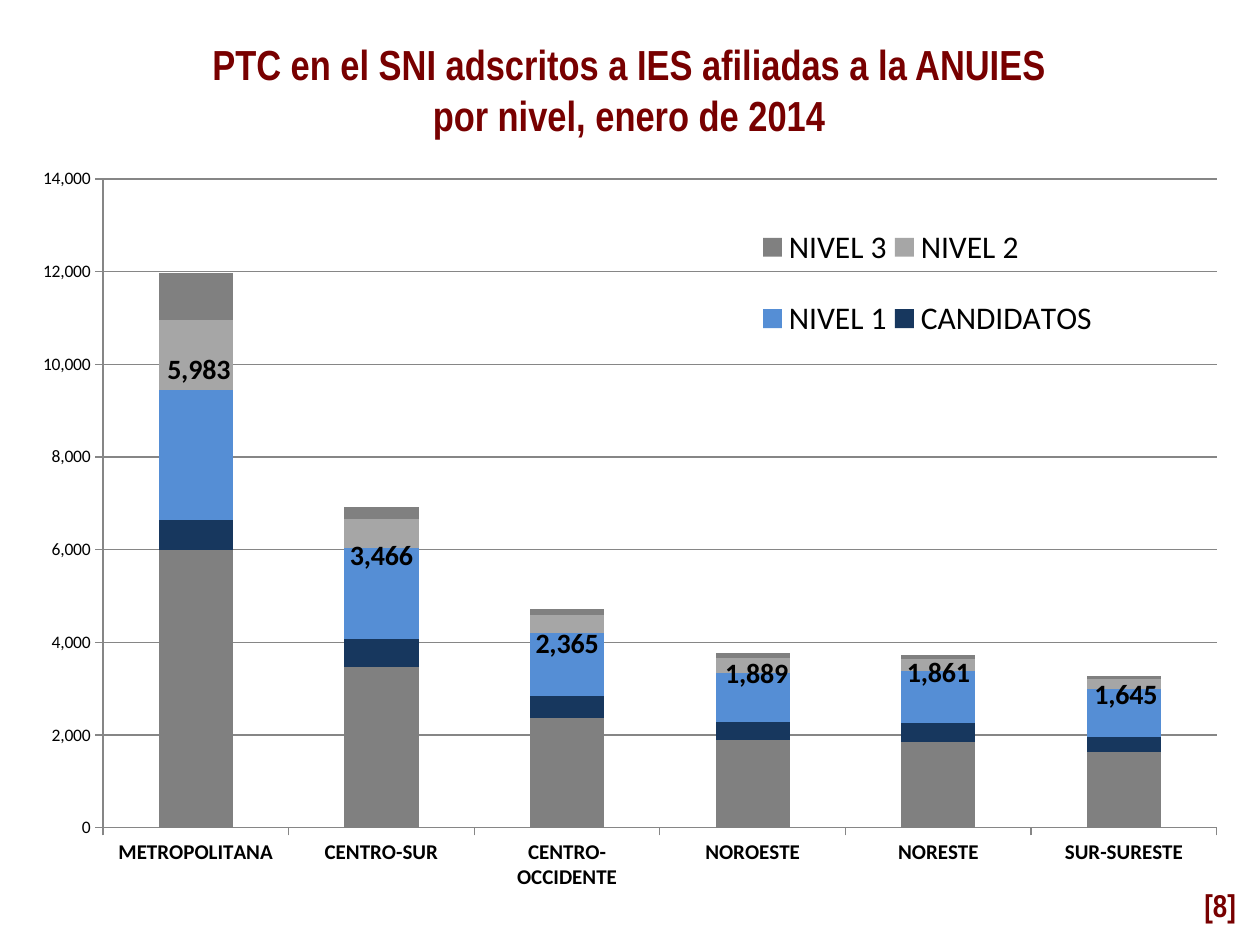
from copy import deepcopy
from dataclasses import dataclass

from pptx import Presentation
from pptx.chart.data import CategoryChartData
from pptx.dml.color import RGBColor
from pptx.enum import chart as charts, text
from pptx.oxml import parse_xml
from pptx.oxml.ns import nsdecls, qn
from pptx.util import Pt

PX = 914400 / 126  # EMU per px


@dataclass(frozen=True)
class Theme:
    heading_font: str = "Arial Narrow"
    chart_font: str = "Calibri"
    heading: str = "780000"
    ink: str = "000000"
    rule: str = "868686"
    title_size: int = 24
    page_size: int = 18
    legend_size: int = 18
    total_size: int = 16
    category_size: int = 12
    axis_size: int = 10


THEME = Theme()

# Chart geometry in px: left, top, width, height
CHART = (19, 154, 1222, 751)
PLOT = (103, 179, 1114, 649)
LEGEND = (755, 195, 345, 176)

REGIONS = ["METROPOLITANA", "CENTRO-SUR", "CENTRO-OCCIDENTE",
           "NOROESTE", "NORESTE", "SUR-SURESTE"]
LEVELS = [  # name, colour, values; the first one holds the totals
    ("Series 1", "808080", (5983, 3466, 2365, 1889, 1861, 1645)),
    ("CANDIDATOS", "17375E", (650, 610, 480, 390, 410, 320)),
    ("NIVEL 1", "558ED5", (2820, 1970, 1360, 1060, 1110, 1030)),
    ("NIVEL 2", "A6A6A6", (1510, 620, 390, 330, 260, 220)),
    ("NIVEL 3", "808080", (1000, 260, 130, 100, 80, 70)),
]
# Shift of each total from the middle of its bar, in px
TOTAL_SHIFTS = [(3, -319), (0, -191), (0, -129), (4, -110), (0, -111), (2, -94)]


def px(*lengths):
    return [round(length * PX) for length in lengths]


def style_font(font, size, color, name, bold=False):
    font.size, font.bold, font.name = Pt(size), bold, name
    font.color.rgb = RGBColor.from_string(color)


def write_heading(shape, box, wording, size, align):
    shape.left, shape.top, shape.width, shape.height = px(*box)
    frame = shape.text_frame
    frame.text = wording
    frame.word_wrap = True
    frame.auto_size = text.MSO_AUTO_SIZE.NONE
    frame.vertical_anchor = text.MSO_ANCHOR.MIDDLE
    for paragraph in frame.paragraphs:
        paragraph.alignment = align
        for run in paragraph.runs:
            style_font(run.font, size, THEME.heading, THEME.heading_font, True)


def layout_xml(**parts):
    tags = "".join(f'<c:{tag} val="{value}"/>' for tag, value in parts.items())
    return parse_xml(f'<c:layout {nsdecls("c")}><c:manualLayout>{tags}'
                     "</c:manualLayout></c:layout>")


def box_layout(box, **target):
    left, top, width, height = CHART
    return layout_xml(**target, xMode="edge", yMode="edge",
                      x=round((box[0] - left) / width, 4),
                      y=round((box[1] - top) / height, 4),
                      w=round(box[2] / width, 4), h=round(box[3] / height, 4))


def drop(parent, tag):
    for child in parent.findall(qn(tag)):
        parent.remove(child)


def style_axes(chart):
    values, regions = chart.value_axis, chart.category_axis
    values.minimum_scale, values.maximum_scale, values.major_unit = 0, 14000, 2000
    values.has_major_gridlines = True
    values.tick_labels.number_format = "#,##0"
    values.tick_labels.number_format_is_linked = False
    for axis, size, bold in ((values, THEME.axis_size, False),
                             (regions, THEME.category_size, True)):
        axis.major_tick_mark = charts.XL_TICK_MARK.OUTSIDE
        style_font(axis.tick_labels.font, size, THEME.ink, THEME.chart_font, bold)
        axis.format.line.color.rgb = RGBColor.from_string(THEME.rule)
    values.major_gridlines.format.line.color.rgb = RGBColor.from_string(THEME.rule)
    # Level region names may wrap
    body = regions._element.xpath("./c:txPr/a:bodyPr")[0]
    body.set("rot", "0")
    body.set("vert", "horz")


def label_totals(totals):
    for index in range(len(TOTAL_SHIFTS)):
        label = totals.points[index].data_label
        style_font(label.font, THEME.total_size, THEME.ink, THEME.chart_font, True)
        label.position = charts.XL_LABEL_POSITION.CENTER
    for label, (dx, dy) in zip(totals._element.xpath(".//c:dLbl"), TOTAL_SHIFTS):
        drop(label, "c:layout")
        label.insert(1, layout_xml(x=round(dx / CHART[2], 4),
                                   y=round(dy / CHART[3], 4)))
    # No leader lines back to the bars
    for leader in totals._element.xpath(".//c:showLeaderLines"):
        leader.set("val", "0")


def move_levels_to_second_axis(chart):
    """Leave the totals on the first axis; the levels get a hidden second one."""
    area = chart._chartSpace.xpath(".//c:plotArea")[0]
    first_bars = area.find(qn("c:barChart"))
    second_bars = deepcopy(first_bars)
    for level in first_bars.findall(qn("c:ser"))[1:]:
        first_bars.remove(level)
    second_bars.remove(second_bars.find(qn("c:ser")))
    first_bars.addnext(second_bars)

    old_ids = [axis.get("val") for axis in second_bars.findall(qn("c:axId"))]
    new_ids = dict(zip(old_ids, ("50010", "50020")))
    for axis_id in second_bars.findall(qn("c:axId")):
        axis_id.set("val", new_ids[axis_id.get("val")])
    last_axis = area.find(qn("c:valAx"))
    for tag in ("c:valAx", "c:catAx"):
        axis = deepcopy(area.find(qn(tag)))
        drop(axis, "c:majorGridlines")
        for id_tag in ("c:axId", "c:crossAx"):
            reference = axis.find(qn(id_tag))
            reference.set("val", new_ids[reference.get("val")])
        axis.find(qn("c:delete")).set("val", "1")
        if tag == "c:valAx":
            axis.find(qn("c:crosses")).set("val", "max")
        last_axis.addnext(axis)
        last_axis = axis

    drop(area, "c:layout")
    area.insert(0, box_layout(PLOT, layoutTarget="inner"))


def add_legend(chart):
    chart.has_legend = True
    legend = chart.legend
    legend.position = charts.XL_LEGEND_POSITION.RIGHT
    legend.include_in_layout = True
    style_font(legend.font, THEME.legend_size, THEME.ink, THEME.chart_font)
    drop(legend._element, "c:layout")
    hidden_totals = parse_xml(f'<c:legendEntry {nsdecls("c")}><c:idx val="0"/>'
                              '<c:delete val="1"/></c:legendEntry>')
    legend._element.insert(1, hidden_totals)
    legend._element.insert(2, box_layout(LEGEND))


def add_level_chart(slide):
    data = CategoryChartData(number_format="#,##0")
    data.categories = REGIONS
    for name, _, values in LEVELS:
        data.add_series(name, values)
    chart = slide.shapes.add_chart(charts.XL_CHART_TYPE.COLUMN_STACKED,
                                   *px(*CHART), data).chart
    chart.has_title = False
    style_font(chart.font, THEME.axis_size, THEME.ink, THEME.chart_font)
    bars = chart.plots[0]
    bars.gap_width, bars.overlap, bars.vary_by_categories = 150, 100, False
    for series, (_, color, _) in zip(bars.series, LEVELS):
        series.format.fill.solid()
        series.format.fill.fore_color.rgb = RGBColor.from_string(color)
    style_axes(chart)
    label_totals(bars.series[0])
    move_levels_to_second_axis(chart)
    add_legend(chart)


def main():
    deck = Presentation()
    deck.slide_width, deck.slide_height = px(1260, 945)
    slide = deck.slides.add_slide(deck.slide_layouts[5])
    # Title
    write_heading(slide.shapes.title, (158, 45, 942, 88),
                  "PTC en el SNI adscritos a IES afiliadas a la ANUIES\n"
                  "por nivel, enero de 2014",
                  THEME.title_size, text.PP_ALIGN.CENTER)
    # Stacked columns by region
    add_level_chart(slide)
    # Page mark
    page_box = (1192, 873, 68, 63)
    write_heading(slide.shapes.add_textbox(*px(*page_box)), page_box, "[8]",
                  THEME.page_size, text.PP_ALIGN.LEFT)
    deck.save("out.pptx")


if __name__ == "__main__":
    main()
